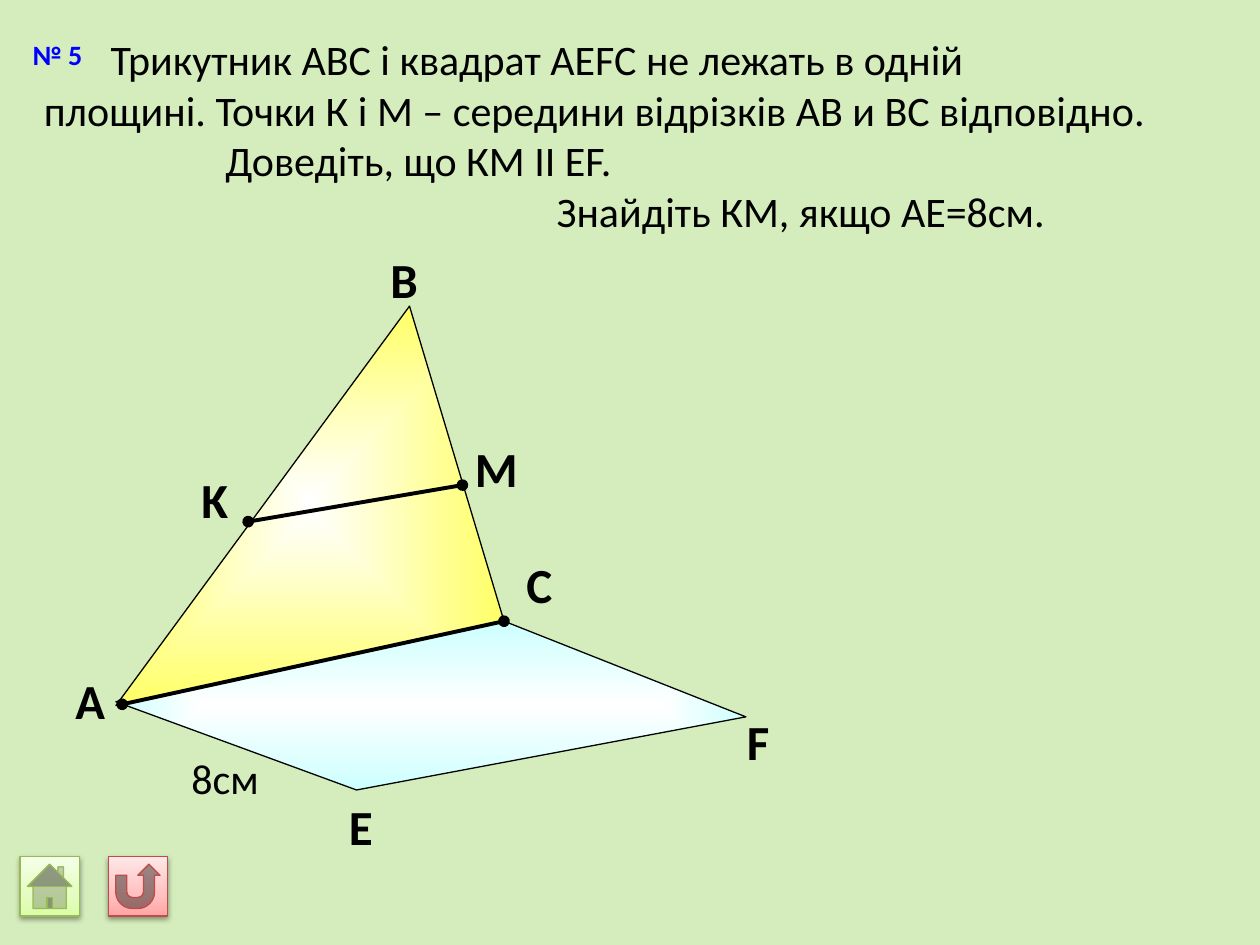
from lxml import etree
from pptx import Presentation
from pptx.dml.color import RGBColor
from pptx.enum.shapes import MSO_CONNECTOR, MSO_SHAPE
from pptx.enum.text import MSO_ANCHOR, MSO_AUTO_SIZE, PP_ALIGN
from pptx.oxml import parse_xml
from pptx.oxml.ns import nsdecls, qn
from pptx.util import Inches, Pt

HOME = MSO_SHAPE.ACTION_BUTTON_HOME
RETURN = MSO_SHAPE.ACTION_BUTTON_RETURN
STRAIGHT = MSO_CONNECTOR.STRAIGHT
MIDDLE = MSO_ANCHOR.MIDDLE
LEFT = PP_ALIGN.LEFT
FIXED = MSO_AUTO_SIZE.NONE
FONT = "Calibri"
BLACK = "000000"

CENTRE = ('<a:path path="rect"><a:fillToRect l="50000" t="50000" '
          'r="50000" b="50000"/></a:path>')
UPWARD = '<a:lin ang="16200000" scaled="0"/>'

TASK = [
    ("Трикутник АВС і квадрат АEFC не лежать в одній", 0.53),
    ("площині. Точки К і М – середини відрізків АВ и ВС відповідно.", 0),
    ("Доведіть, що КМ II EF.", 1.44),
    ("Знайдіть КМ, якщо АЕ=8см.", 4.07),
]
SQUARE = [(0.92, 5.57), (4, 4.93), (5.92, 5.69), (2.83, 6.27)]
TRIANGLE = [(0.92, 5.6), (3.25, 2.43), (4, 4.93)]
SEGMENTS = [((1.97, 4.14), (3.67, 3.85)), ((0.97, 5.59), (4, 4.93))]
LABELS = [
    ("А", 0.5, 5.27), ("В", 3, 1.93), ("С", 4.08, 4.35), ("Е", 2.67, 6.27),
    ("F", 5.83, 5.6), ("K", 1.5, 3.68), ("M", 3.67, 3.43),
]
BUTTONS = [
    (HOME, 0.16, [(0, "DAFDA7"), (35, "E4FCC2"), (100, "F5FFE7")], "98B955"),
    (RETURN, 0.86, [(0, "FFA6A5"), (35, "FFC0BF"), (100, "FFE7E7")], "BF4C48"),
]


def color(code):
    return RGBColor.from_string(code)


def style(par, size, bold=False, code=BLACK):
    font = par.font
    font.name, font.size, font.bold = FONT, Pt(size), bold
    font.color.rgb = color(code)


def paint(shape, stops, course, edge):
    """Give a shape a gradient along the course and a thin outline."""
    shape.shadow.inherit = False
    shape.line.color.rgb = color(edge)
    shape.line.width = Pt(0.75)
    shape.fill.background()
    marks = "".join(
        f'<a:gs pos="{pos * 1000}"><a:srgbClr val="{code}"/></a:gs>'
        for pos, code in stops)
    blend = parse_xml(f'<a:gradFill {nsdecls("a")} rotWithShape="1">'
                      f'<a:gsLst>{marks}</a:gsLst>{course}</a:gradFill>')
    props = shape._element.spPr
    props.replace(props.find(qn("a:noFill")), blend)


def add_text(slide, box, text, size, bold=False):
    shape = slide.shapes.add_textbox(*map(Inches, box))
    par = shape.text_frame.paragraphs[0]
    par.text = text
    style(par, size, bold)


def add_plane(slide, points, code):
    corners = [(Inches(x), Inches(y)) for x, y in points]
    maker = slide.shapes.build_freeform(*corners[0])
    maker.add_line_segments(corners[1:], close=True)
    paint(maker.convert_to_shape(), [(0, "FFFFFF"), (100, code)], CENTRE, BLACK)


def add_segment(slide, start, end):
    """Draw a line with a dot at both ends."""
    link = slide.shapes.add_connector(STRAIGHT, *map(Inches, start + end))
    link.line.color.rgb = color(BLACK)
    link.line.width = Pt(2.25)
    edge = link.line._get_or_add_ln()
    for tag in ("a:headEnd", "a:tailEnd"):
        etree.SubElement(edge, qn(tag), type="oval")
    etree.SubElement(link._element.spPr, qn("a:effectLst"))


def add_figure(slide):
    add_plane(slide, SQUARE, "CCFFFF")
    add_plane(slide, TRIANGLE, "FFFF66")
    for start, end in SEGMENTS:
        add_segment(slide, start, end)
    for text, left, top in LABELS:
        add_text(slide, (left, top, 0.48, 0.57), text, 28, True)
    add_text(slide, (1.42, 5.92, 0.78, 0.5), "8см", 24)


def add_task(slide, box):
    frame = slide.shapes.add_textbox(*map(Inches, box)).text_frame
    frame.word_wrap = True
    for i, (text, indent) in enumerate(TASK):
        par = frame.add_paragraph() if i else frame.paragraphs[0]
        par.text = text
        style(par, 24)
        par._p.get_or_add_pPr().set("indent", str(Inches(indent)))


def set_title(slide, box):
    title = slide.shapes.title
    title.left, title.top, title.width, title.height = map(Inches, box)
    frame = title.text_frame
    frame.text = "№ 5"
    frame.auto_size = FIXED
    frame.vertical_anchor = MIDDLE
    par = frame.paragraphs[0]
    par.alignment = LEFT
    style(par, 16, True, "0000FF")


def add_buttons(slide, top, side):
    for kind, left, stops, edge in BUTTONS:
        shape = slide.shapes.add_shape(
            kind, *map(Inches, (left, top, side, side)))
        paint(shape, stops, UPWARD, edge)
        effects = shape._element.spPr.find(qn("a:effectLst"))
        effects.append(parse_xml(
            f'<a:outerShdw {nsdecls("a")} blurRad="{Pt(3.1)}" '
            f'dist="{Pt(1.6)}" dir="5400000" rotWithShape="0">'
            '<a:srgbClr val="000000"><a:alpha val="38000"/></a:srgbClr>'
            '</a:outerShdw>'))


def main():
    deck = Presentation()
    deck.slide_width, deck.slide_height = Inches(10), Inches(7.5)
    slide = deck.slides.add_slide(deck.slide_layouts[5])
    back = slide.background.fill
    back.solid()
    back.fore_color.rgb = color("D5EDBC")
    add_figure(slide)
    add_task(slide, (0.25, 0.22, 9.5, 1.72))
    set_title(slide, (0.16, 0.23, 0.77, 0.4))
    add_buttons(slide, 6.8, 0.47)
    deck.save("out.pptx")


if __name__ == "__main__":
    main()
